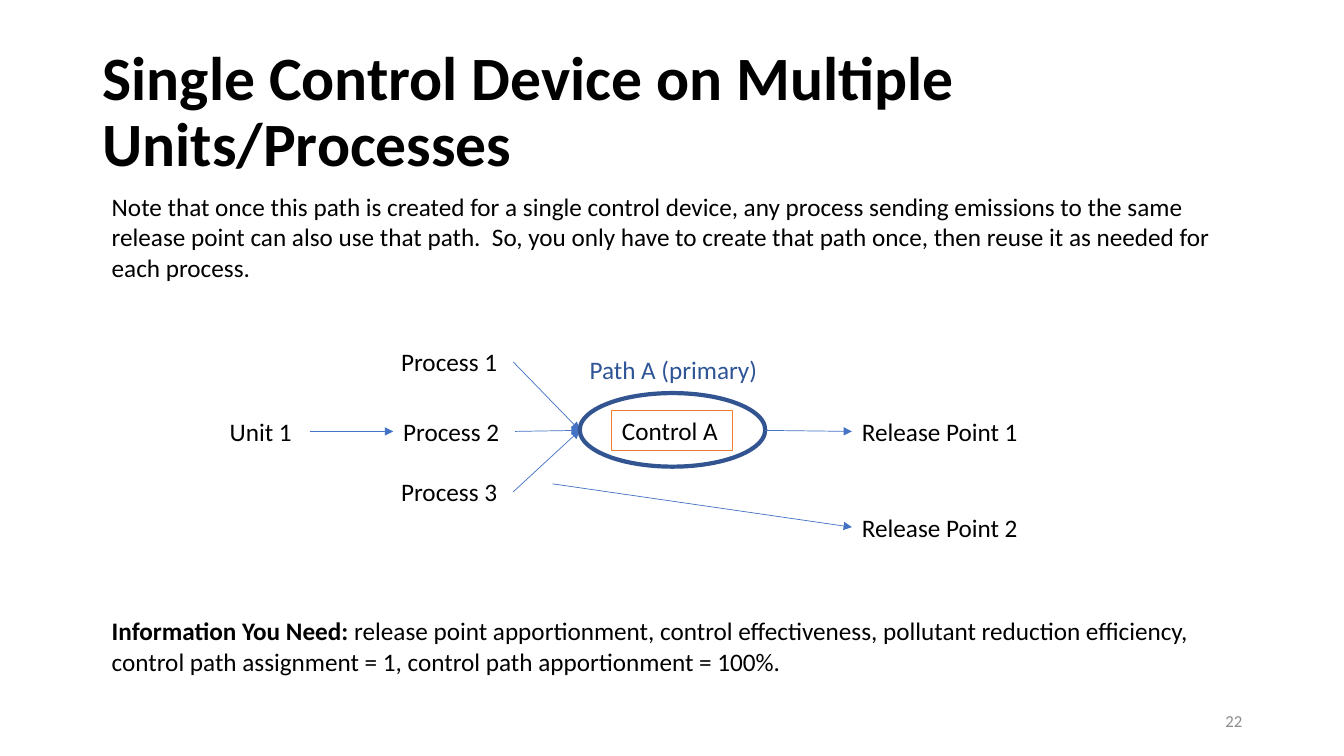
from lxml.etree import SubElement
from pptx import Presentation
from pptx.dml.color import RGBColor
from pptx.enum.shapes import MSO_CONNECTOR, MSO_SHAPE
from pptx.enum.text import MSO_ANCHOR, PP_ALIGN
from pptx.oxml.ns import qn
from pptx.util import Inches, Pt

COLORS = {"text": "000000", "number": "8C8C8C", "arrow": "4472C4",
          "control": "ED7D31", "path": "2F5597", "ellipse": "325491"}
TOP, LEFT, RIGHT = 0, 1, 3
LABEL_H = 0.4


def rgb(name):
    return RGBColor.from_string(COLORS[name])


def write(sp, text, size=18, color="text", bold=None, anchor=MSO_ANCHOR.TOP):
    tf = sp.text_frame
    tf.word_wrap = True
    tf.vertical_anchor = anchor
    p = tf.paragraphs[0]
    p.text = text
    p.alignment = PP_ALIGN.LEFT
    p.font.name = "Calibri"
    p.font.size = Pt(size)
    p.font.bold = bold
    p.font.color.rgb = rgb(color)
    return p


def add_text(s, box, text, **style):
    sp = s.shapes.add_textbox(*map(Inches, box))
    return sp, write(sp, text, **style)


def add_outline(s, kind, box, color, width):
    sp = s.shapes.add_shape(kind, *map(Inches, box))
    sp.shadow.inherit = False
    sp.fill.background()
    sp.line.color.rgb = rgb(color)
    sp.line.width = Pt(width)
    return sp


def add_arrow(s, start, end):
    """Each end is either an (x, y) point or a (shape, side) pair."""
    points = [(0, 0) if hasattr(e[0], "shape_id") else e for e in (start, end)]
    cxn = s.shapes.add_connector(
        MSO_CONNECTOR.STRAIGHT, *(Inches(v) for point in points for v in point))
    if hasattr(start[0], "shape_id"):
        cxn.begin_connect(*start)
    if hasattr(end[0], "shape_id"):
        cxn.end_connect(*end)
    cxn.line.color.rgb = rgb("arrow")
    cxn.line.width = Pt(0.5)
    SubElement(cxn.line._get_or_add_ln(), qn("a:tailEnd"), type="triangle")
    SubElement(cxn._element.spPr, qn("a:effectLst"))


def add_title(s, box):
    _, p = add_text(s, box, "Single Control Device on Multiple Units/Processes",
                    size=44, bold=True, anchor=MSO_ANCHOR.MIDDLE)
    p.line_spacing = 0.9


def add_note(s, box):
    add_text(s, box, "Note that once this path is created for a single control device, "
             "any process sending emissions to the same release point can also use that "
             "path.  So, you only have to create that path once, then reuse it as needed "
             "for each process.")


def add_flow(s, box):
    x, y, w, h = box
    path_x, path_w = x + 3.57, 1.84
    mid_y = y + 0.88
    path_in, path_out = (path_x, mid_y), (path_x + path_w, mid_y)

    # Unit and its processes
    unit, _ = add_text(s, (x, y + 0.69, 0.89, LABEL_H), "Unit 1")
    processes = []
    for i, (dx, dy) in enumerate([(1.7, 0), (1.72, 0.69), (1.7, 1.29)], 1):
        sp, _ = add_text(s, (x + dx, y + dy, 1.21, LABEL_H), f"Process {i}")
        processes.append(sp)
        add_arrow(s, (sp, RIGHT), path_in)
    add_arrow(s, (unit, RIGHT), (processes[1], LEFT))

    # Control device inside its path
    control = add_outline(s, MSO_SHAPE.RECTANGLE,
                          (path_x + 0.32, y + 0.68, 1.2, LABEL_H), "control", 0.75)
    write(control, "Control A")
    add_text(s, (path_x, y + 0.08, 1.9, LABEL_H), "Path A (primary)", color="path")
    add_outline(s, MSO_SHAPE.OVAL, (path_x, y + 0.51, path_w, 0.73), "ellipse", 3)

    # Release points, the second one bypassing the control
    release_w = 2.48
    starts = [path_out, (x + 3.3, y + 1.41)]
    for i, (start, dy) in enumerate(zip(starts, (0.69, h - LABEL_H)), 1):
        sp, _ = add_text(s, (x + w - release_w, y + dy, release_w, LABEL_H),
                         f"Release Point {i}")
        add_arrow(s, start, (sp, LEFT))


def add_information(s, box):
    _, p = add_text(s, box, "Information You Need: ")
    p.runs[0].font.bold = True
    r = p.add_run()
    r.text = ("release point apportionment, control effectiveness, pollutant reduction "
              "efficiency, control path assignment = 1, control path apportionment = 100%.")


def add_slide_number(s, box):
    _, p = add_text(s, box, "22", size=12, color="number", anchor=MSO_ANCHOR.MIDDLE)
    p.alignment = PP_ALIGN.RIGHT


def main():
    prs = Presentation()
    prs.slide_width, prs.slide_height = Inches(13.33), Inches(7.5)
    s = prs.slides.add_slide(prs.slide_layouts[6])
    add_title(s, (0.92, 0.4, 11.5, 1.45))
    add_note(s, (1.01, 1.85, 11.21, 1.01))
    add_flow(s, (2.18, 3.39, 8.75, 2.04))
    add_information(s, (1.01, 6.06, 11.21, 0.71))
    add_slide_number(s, (9.42, 6.95, 3, 0.4))
    prs.save("out.pptx")


if __name__ == "__main__":
    main()
